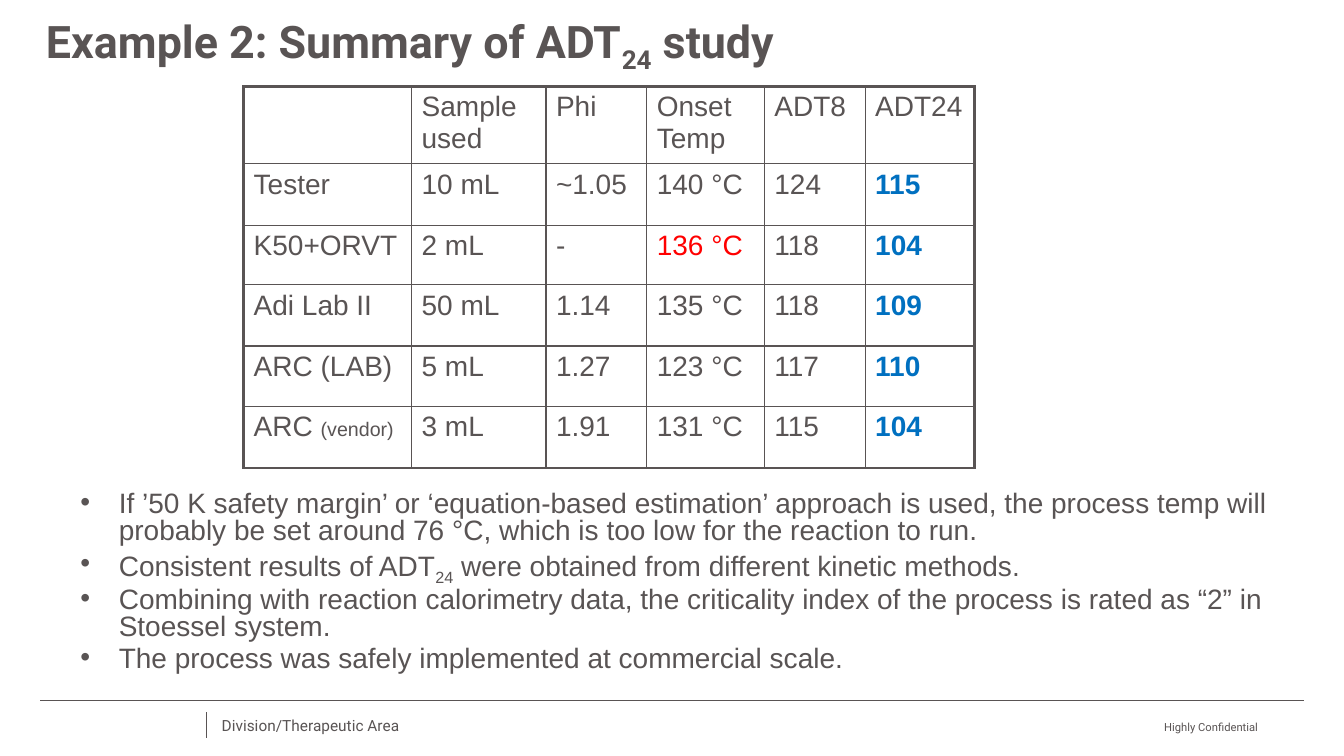
from dataclasses import dataclass
from lxml.etree import SubElement
from pptx import Presentation
from pptx.dml.color import RGBColor
from pptx.enum.shapes import MSO_CONNECTOR
from pptx.enum.text import MSO_ANCHOR, PP_ALIGN
from pptx.oxml import parse_xml
from pptx.oxml.ns import nsdecls, qn
from pptx.util import Inches, Pt


@dataclass(frozen=True)
class Theme:
    ink: str = "595454"
    result: str = "0070C0"
    alert: str = "FF0000"
    heading_font: str = "Roboto"
    body_font: str = "Arial"
    title_size: float = 32
    body_size: float = 20
    note_size: float = 14
    footer_size: float = 11
    label_size: float = 8
    thin: float = 1
    thick: float = 2.25
    hairline: float = 0.5


@dataclass(frozen=True)
class Box:
    left: float
    top: float
    width: float
    height: float

    def lengths(self):
        return [grid(cells) for cells in (self.left, self.top, self.width, self.height)]


THEME = Theme()
COLUMNS, ROWS = 160, 90
CELL = Inches(7.5) / ROWS
COLUMN_WIDTHS = (20, 16, 12, 14, 12, 13)
ROW_HEIGHTS = (9.2, 7.3, 7.1, 7.3, 7.2, 7.3)
RESULTS = [
    ("", "Sample used", "Phi", "Onset Temp", "ADT8", "ADT24"),
    ("Tester", "10 mL", "~1.05", "140 °C", "124", "115"),
    ("K50+ORVT", "2 mL", "-", "136 °C", "118", "104"),
    ("Adi Lab II", "50 mL", "1.14", "135 °C", "118", "109"),
    ("ARC (LAB)", "5 mL", "1.27", "123 °C", "117", "110"),
    ("ARC |(vendor)", "3 mL", "1.91", "131 °C", "115", "104"),
]
ALERT_CELL = (2, 3)
TITLE = "Example 2: Summary of ADT|24| study"
FINDINGS = [
    "If ’50 K safety margin’ or ‘equation-based estimation’ approach is used, the process temp "
    "will probably be set around 76 °C, which is too low for the reaction to run.",
    "Consistent results of ADT|24| were obtained from different kinetic methods.",
    "Combining with reaction calorimetry data, the criticality index of the process is rated "
    "as “2” in Stoessel system.",
    "The process was safely implemented at commercial scale.",
]


def grid(cells):
    return round(cells * CELL)


def apply(target, formats):
    for name, value in formats.items():
        setattr(target, name, value)


def add_span(para, text, size, font, color=THEME.ink, bold=False):
    span = para.add_run()
    span.text = text
    apply(span.font, {"size": Pt(size), "name": font, "bold": bold})
    span.font.color.rgb = RGBColor.from_string(color)
    return span


def add_subscripted(para, text, size, font, bold=False):
    for index, part in enumerate(text.split("|")):
        span = add_span(para, part, size, font, bold=bold)
        if index % 2:
            span.font._element.set("baseline", "-25000")


def add_text_box(page, box, **formats):
    frame = page.shapes.add_textbox(*box.lengths()).text_frame
    apply(frame, {"word_wrap": True, **formats})
    return frame


def add_rule(page, start, end):
    points = [grid(cells) for cells in (*start, *end)]
    rule = page.shapes.add_connector(MSO_CONNECTOR.STRAIGHT, *points)
    rule.line.color.rgb = RGBColor.from_string(THEME.ink)
    rule.line.width = Pt(THEME.hairline)
    SubElement(rule._element.spPr, qn("a:effectLst"))


def add_footer(page, box):
    middle = box.top + 2.9
    add_rule(page, (box.left, box.top), (box.left + box.width, box.top))
    add_rule(page, (box.left + 19.8, middle - 1.5), (box.left + 19.8, middle + 1.5))
    margins = dict.fromkeys(("margin_left", "margin_top", "margin_right", "margin_bottom"), 0)
    division = add_text_box(page, Box(box.left + 21.6, middle - 1.5, 49.7, 3), **margins,
                            vertical_anchor=MSO_ANCHOR.MIDDLE)
    division.word_wrap = False
    add_span(division.paragraphs[0], "Division/Therapeutic Area",
             THEME.footer_size, THEME.heading_font)
    notice = add_text_box(page, Box(box.left + 102.8, middle - 1.9, 42.2, 3), **margins,
                          vertical_anchor=MSO_ANCHOR.BOTTOM)
    notice.paragraphs[0].alignment = PP_ALIGN.RIGHT
    add_span(notice.paragraphs[0], "Highly Confidential", THEME.label_size, THEME.heading_font)


def add_title(page, box):
    para = add_text_box(page, box).paragraphs[0]
    para.line_spacing = 0.9
    add_subscripted(para, TITLE, THEME.title_size, THEME.heading_font, bold=True)


def set_borders(cell, outer):
    cell.fill.background()
    properties = cell._tc.get_or_add_tcPr()
    for index, side in enumerate("LRTB"):
        width = Pt(THEME.thick if side in outer else THEME.thin)
        properties.insert(index, parse_xml(
            f'<a:ln{side} {nsdecls("a")} w="{width}"><a:solidFill>'
            f'<a:srgbClr val="{THEME.ink}"/></a:solidFill></a:ln{side}>'))


def add_results(page, box):
    last_row, last_column = len(ROW_HEIGHTS) - 1, len(COLUMN_WIDTHS) - 1
    table = page.shapes.add_table(last_row + 1, last_column + 1, *box.lengths()).table
    apply(table, {"first_row": False, "horz_banding": False})
    for column, width in zip(table.columns, COLUMN_WIDTHS):
        column.width = grid(width)
    for row, height in zip(table.rows, ROW_HEIGHTS):
        row.height = grid(height)
    for r, values in enumerate(RESULTS):
        for c, value in enumerate(values):
            cell = table.cell(r, c)
            edges = {"L": c == 0, "R": c == last_column, "T": r == 0, "B": r == last_row}
            set_borders(cell, [side for side, outer in edges.items() if outer])
            is_result = r > 0 and c == last_column
            color = THEME.result if is_result else THEME.ink
            if (r, c) == ALERT_CELL:
                color = THEME.alert
            para = cell.text_frame.paragraphs[0]
            for part, size in zip(value.split("|"), (THEME.body_size, THEME.note_size)):
                if part:
                    add_span(para, part, size, THEME.body_font, color, is_result)


def add_findings(page, box):
    frame = add_text_box(page, box)
    for index, finding in enumerate(FINDINGS):
        para = frame.add_paragraph() if index else frame.paragraphs[0]
        properties = para._p.get_or_add_pPr()
        indent = Inches(0.38)
        properties.set("marL", str(indent))
        properties.set("indent", str(-indent))
        SubElement(properties, qn("a:buFont"), typeface=THEME.body_font)
        SubElement(properties, qn("a:buChar"), char="•")
        para.line_spacing = 0.8
        if index:
            para.space_before = Pt(THEME.body_size * 0.2)
        add_subscripted(para, finding, THEME.body_size, THEME.body_font)


def main():
    deck = Presentation()
    apply(deck, {"slide_width": grid(COLUMNS), "slide_height": grid(ROWS)})
    page = deck.slides.add_slide(deck.slide_layouts[6])
    add_footer(page, Box(4.8, 83.4, 150.4, 6.6))
    add_results(page, Box(29, 10.3, sum(COLUMN_WIDTHS), sum(ROW_HEIGHTS)))
    add_findings(page, Box(8.4, 58, 144.1, 32))
    add_title(page, Box(4.3, 1.1, 120, 9))
    deck.save("out.pptx")


if __name__ == "__main__":
    main()
